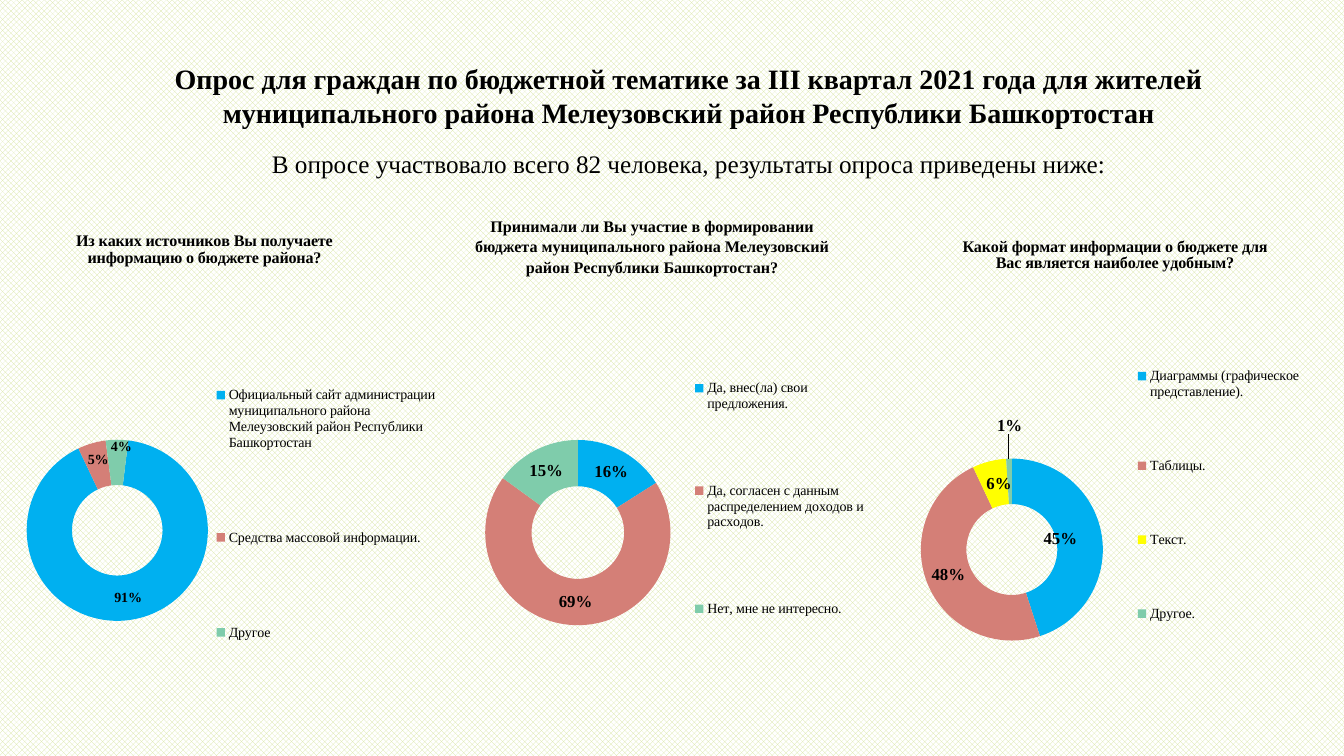
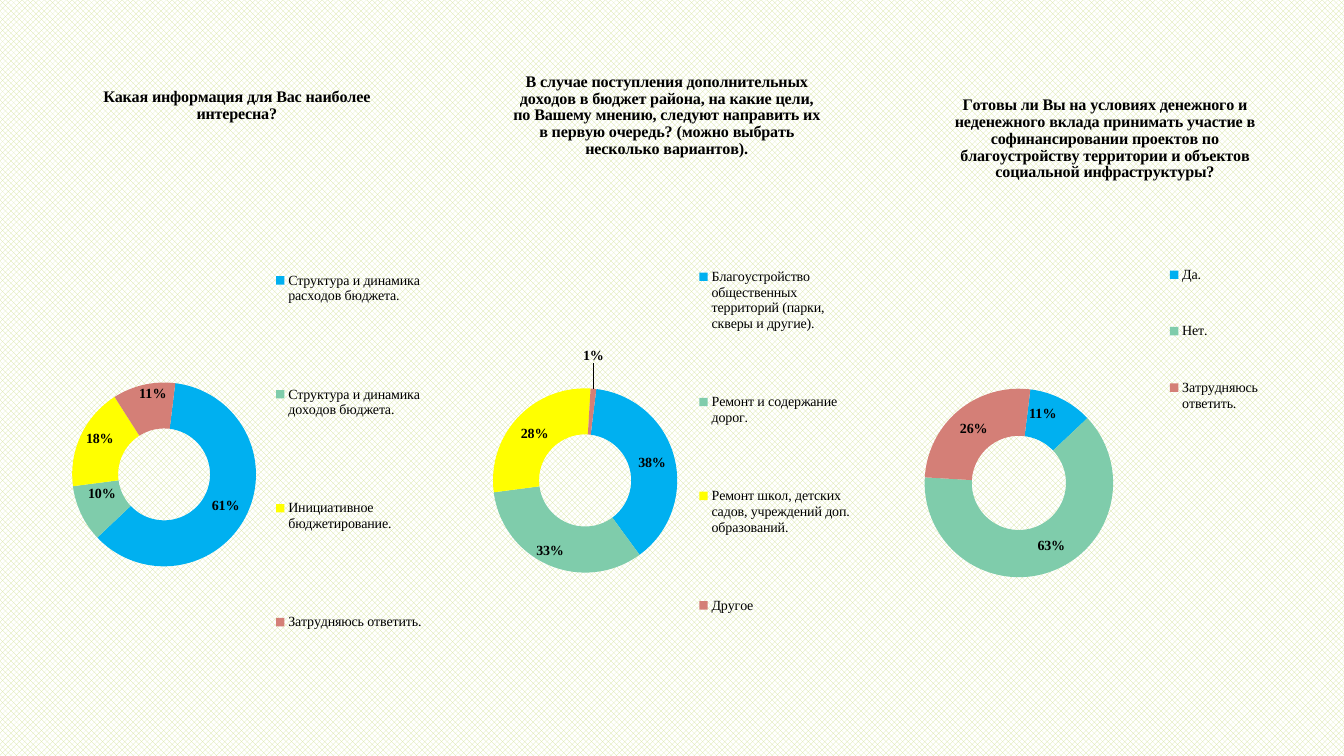
import pptx
import pptx.chart.data
import pptx.dml.color
import pptx.enum.chart
import pptx.enum.dml
import pptx.enum.text
import pptx.oxml
import pptx.oxml.ns
import pptx.util

Pt = pptx.util.Pt
FONT = "Times New Roman"
INKS = {
    "text": "000000", "weave": "D6E49C", "paper": "FFFFFF",
    "blue": "00B0F0", "red": "D47F77", "green": "7FCCAB", "gold": "FFFF00",
}
WIDE = (59, 866)

SOURCES = {
    "box": (13, 147.6, 303, 381.6),
    "title": "Из каких источников Вы получаете информацию о бюджете района?",
    "head": (0.13, 0.04),
    "plot": (0.02, 0.354, 0.427, 0.504),
    "key": (0.455, 0.19, 0.54, 0.77),
    "turn": 7,
    "rows": [
        ("Официальный сайт администрации муниципального района "
         "Мелеузовский район Республики Башкортостан", 91, "blue"),
        ("Средства массовой информации.", 5, "red"),
        ("Другое", 4, "green"),
    ],
    "shifts": {1: (0, -0.01), 2: (0.01, -0.03)},
}
SHARE = {
    "box": (331.2, 149.8, 290.2, 375.1),
    "plot": (0.053, 0.419, 0.456, 0.392),
    "key": (0.557, 0.19, 0.44, 0.72),
    "size": 12,
    "rows": [
        ("Да, внес(ла) свои предложения.", 16, "blue"),
        ("Да, согласен с данным распределением доходов и расходов.", 69, "red"),
        ("Нет, мне не интересно.", 15, "green"),
    ],
}
FORMAT = {
    "box": (640.8, 149.8, 298.1, 377.3),
    "title": "Какой формат информации о бюджете для Вас является наиболее удобным?",
    "head": (0.15, 0.045),
    "plot": (0.057, 0.44, 0.436, 0.407),
    "key": (0.56, 0.19, 0.42, 0.7),
    "size": 12,
    "rows": [
        ("Диаграммы (графическое представление).", 45, "blue"),
        ("Таблицы.", 48, "red"),
        ("Текст.", 6, "gold"),
        ("Другое.", 1, "green"),
    ],
    "shifts": {0: (-0.045, 0), 2: (0.01, 0), 3: (0, -0.106)},
}
TOPICS = {
    "box": (28.8, 46.1, 277.2, 472.3),
    "title": "Какая информация для Вас наиболее интересна?",
    "head": (0.155, 0.03),
    "plot": (0.082, 0.481, 0.474, 0.278),
    "key": (0.59, 0.19, 0.41, 0.79),
    "turn": 7,
    "rows": [
        ("Структура и динамика расходов бюджета.", 61, "blue"),
        ("Структура и динамика доходов бюджета.", 10, "green"),
        ("Инициативное бюджетирование.", 18, "gold"),
        ("Затрудняюсь ответить.", 11, "red"),
    ],
    "shifts": {1: (0, -0.015), 2: (-0.005, -0.01), 3: (0.01, -0.02)},
}
GOALS = {
    "box": (337.7, 46.8, 283.7, 468.7),
    "title": "В случае поступления дополнительных доходов в бюджет района, "
             "на какие цели, по Вашему мнению, следуют направить их в первую "
             "очередь? (можно выбрать несколько вариантов).",
    "head": (0.095, 0.005),
    "plot": (0.051, 0.339, 0.464, 0.587),
    "key": (0.56, 0.215, 0.4, 0.715),
    "turn": 7,
    "rows": [
        ("Благоустройство общественных территорий (парки, скверы и другие).",
         38, "blue"),
        ("Ремонт и содержание дорог.", 33, "green"),
        ("Ремонт школ, детских садов, учреждений доп. образований.", 28, "gold"),
        ("Другое", 1, "red"),
    ],
    "shifts": {1: (-0.02, 0.01), 3: (0.005, -0.085)},
}
FUNDING = {
    "box": (642.2, 51.8, 290.2, 467.3),
    "title": "Готовы ли Вы на условиях денежного и неденежного вклада принимать "
             "участие в софинансировании проектов по благоустройству территории "
             "и объектов социальной инфраструктуры?",
    "head": (0.13, 0.03),
    "plot": (0.063, 0.293, 0.464, 0.669),
    "key": (0.65, 0.235, 0.25, 0.345),
    "turn": 7,
    "rows": [
        ("Да.", 11, "blue"),
        ("Нет.", 63, "green"),
        ("Затрудняюсь ответить.", 26, "red"),
    ],
    "shifts": {0: (-0.02, -0.01), 1: (0.02, -0.005)},
}


def ink(name):
    """Return a palette colour."""
    return pptx.dml.color.RGBColor.from_string(INKS[name])


def style(font, size, bold=False):
    """Format a font in the deck's style."""
    font.name, font.size, font.bold = FONT, Pt(size), bold
    font.color.rgb = ink("text")


def move(shape, box):
    """Set a shape's place in points."""
    shape.left, shape.top, shape.width, shape.height = map(Pt, box)


def write(shape, text, size, bold=False, lines=1.0):
    """Fill a shape with one centred paragraph."""
    frame = shape.text_frame
    frame.word_wrap = True
    frame.text = text
    para = frame.paragraphs[0]
    para.alignment = pptx.enum.text.PP_ALIGN.CENTER
    para.space_before = Pt(0)
    para.line_spacing = lines
    style(para.runs[0].font, size, bold)


def place(host, index, spot, inner=False, edge=True):
    """Give a chart part a manual layout."""
    for old in host.xpath("c:layout"):
        host.remove(old)
    tags = '<c:layoutTarget val="inner"/>' if inner else ""
    if edge:
        tags += '<c:xMode val="edge"/><c:yMode val="edge"/>'
    tags += "".join(f'<c:{k} val="{v}"/>' for k, v in zip("xywh", spot))
    space = pptx.oxml.ns.nsdecls("c")
    xml = f"<c:layout {space}><c:manualLayout>{tags}</c:manualLayout></c:layout>"
    host.insert(index, pptx.oxml.parse_xml(xml))


def label(chart, series, size, shifts):
    """Show percent labels and shift some of them."""
    marks = series.data_labels
    marks.show_value, marks.show_percentage = False, True
    marks.number_format, marks.number_format_is_linked = "0%", False
    style(marks.font, size, True)
    for index, shift in shifts.items():
        style(series.points[index].data_label.font, size, True)
        mark = chart.element.xpath(f".//c:dLbl[c:idx/@val='{index}']")[0]
        mark.xpath("c:showVal")[0].set("val", "0")
        mark.xpath("c:showPercent")[0].set("val", "1")
        place(mark, 1, shift, edge=False)


def ring(slide, item):
    """Add a doughnut chart with its title, legend and labels."""
    names, values, tints = zip(*item["rows"])
    data = pptx.chart.data.CategoryChartData()
    data.categories = names
    data.add_series("Series 1", values)
    kind = pptx.enum.chart.XL_CHART_TYPE.DOUGHNUT
    chart = slide.shapes.add_chart(kind, *map(Pt, item["box"]), data).chart
    style(chart.font, 10)
    root = chart.element
    plot = chart.plots[0]
    plot.vary_by_categories = True
    root.xpath(".//c:firstSliceAng")[0].set("val", str(item.get("turn", 0)))
    root.xpath(".//c:holeSize")[0].set("val", "50")
    place(root.xpath("c:chart/c:plotArea")[0], 0, item["plot"], inner=True)

    chart.has_title = "title" in item
    if chart.has_title:
        write_title(chart, item)
    chart.has_legend = True
    chart.legend.position = pptx.enum.chart.XL_LEGEND_POSITION.RIGHT
    chart.legend.include_in_layout = False
    style(chart.legend.font, 10)
    place(root.xpath("c:chart/c:legend")[0], 1, item["key"])

    series = plot.series[0]
    for index, tint in enumerate(tints):
        fill = series.points[index].format.fill
        fill.solid()
        fill.fore_color.rgb = ink(tint)
    label(chart, series, item.get("size", 10), item.get("shifts", {}))


def write_title(chart, item):
    """Write and place a chart title."""
    frame = chart.chart_title.text_frame
    frame.text = item["title"]
    style(frame.paragraphs[0].runs[0].font, 11.5, True)
    chart.chart_title.include_in_layout = False
    place(chart.element.xpath("c:chart/c:title")[0], 1, item["head"])


def weave(deck):
    """Set the shared patterned background."""
    fill = deck.slide_master.background.fill
    fill.patterned()
    fill.pattern = pptx.enum.dml.MSO_PATTERN.LARGE_CHECKER_BOARD
    fill.fore_color.rgb = ink("weave")
    fill.back_color.rgb = ink("paper")


def open_slide(deck):
    """Add the slide with the survey heading."""
    slide = deck.slides.add_slide(deck.slide_layouts[0])
    left, width = WIDE
    head, lead = slide.placeholders
    move(head, (left, 19.4, width, 76.3))
    write(head, "Опрос для граждан по бюджетной тематике за III квартал 2021 года "
          "для жителей муниципального района Мелеузовский район "
          "Республики Башкортостан", 20, True)
    head.text_frame.vertical_anchor = pptx.enum.text.MSO_ANCHOR.BOTTOM
    move(lead, (left, 102.2, width, 28.8))
    write(lead, "В опросе участвовало всего 82 человека, "
          "результаты опроса приведены ниже:", 18)
    for item in (SHARE, FORMAT, SOURCES):
        ring(slide, item)
    left, top = SHARE["box"][:2]
    note = slide.shapes.add_textbox(*map(Pt, (left, top, 269.3, 51.1)))
    write(note, "Принимали ли Вы участие в формировании бюджета муниципального "
          "района Мелеузовский район Республики Башкортостан?", 11.5, True, 1.07)


def main():
    """Build and save the deck."""
    deck = pptx.Presentation()
    deck.slide_width, deck.slide_height = Pt(960), Pt(540)
    weave(deck)
    open_slide(deck)
    slide = deck.slides.add_slide(deck.slide_layouts[6])
    for item in (TOPICS, GOALS, FUNDING):
        ring(slide, item)
    deck.save("out.pptx")


if __name__ == "__main__":
    main()
